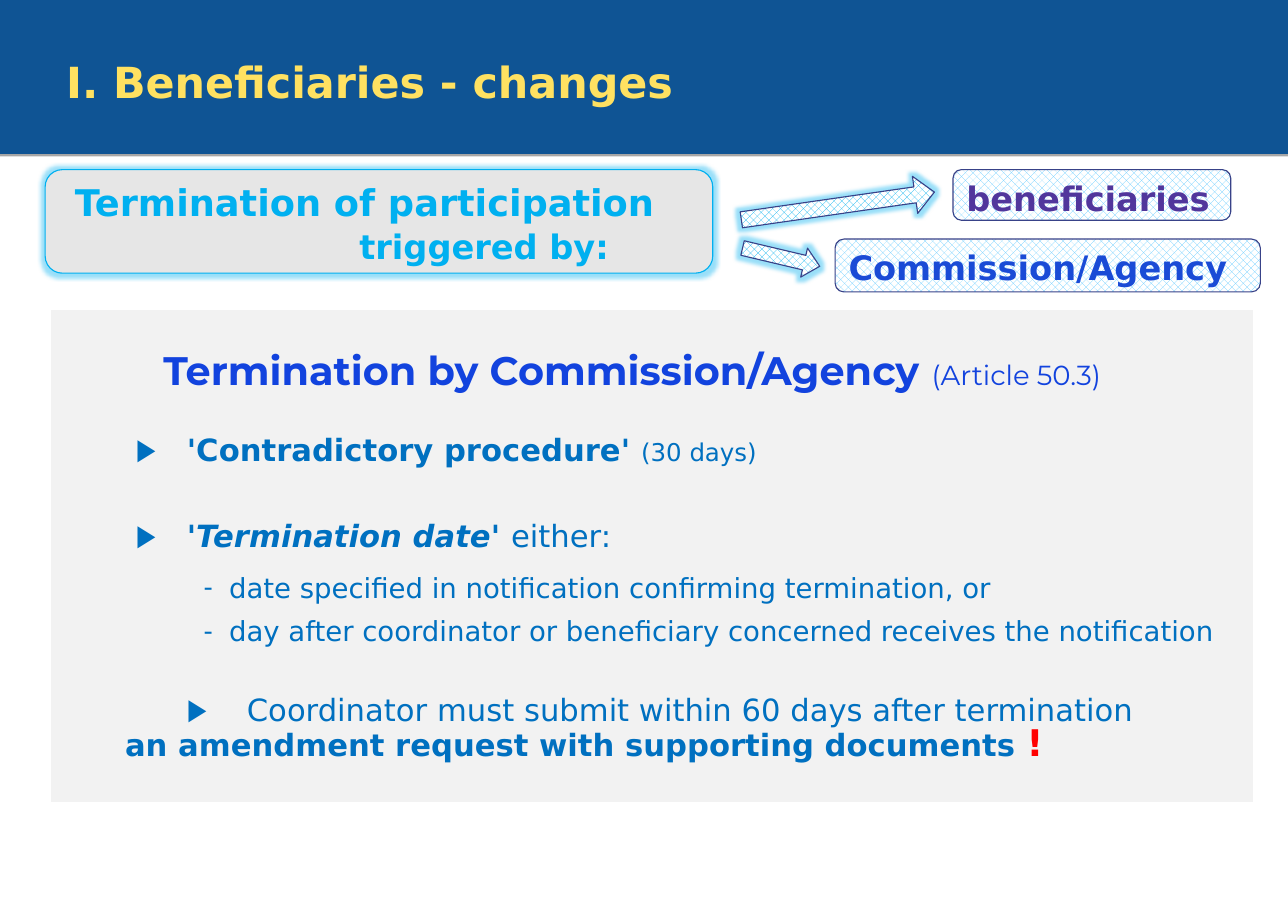
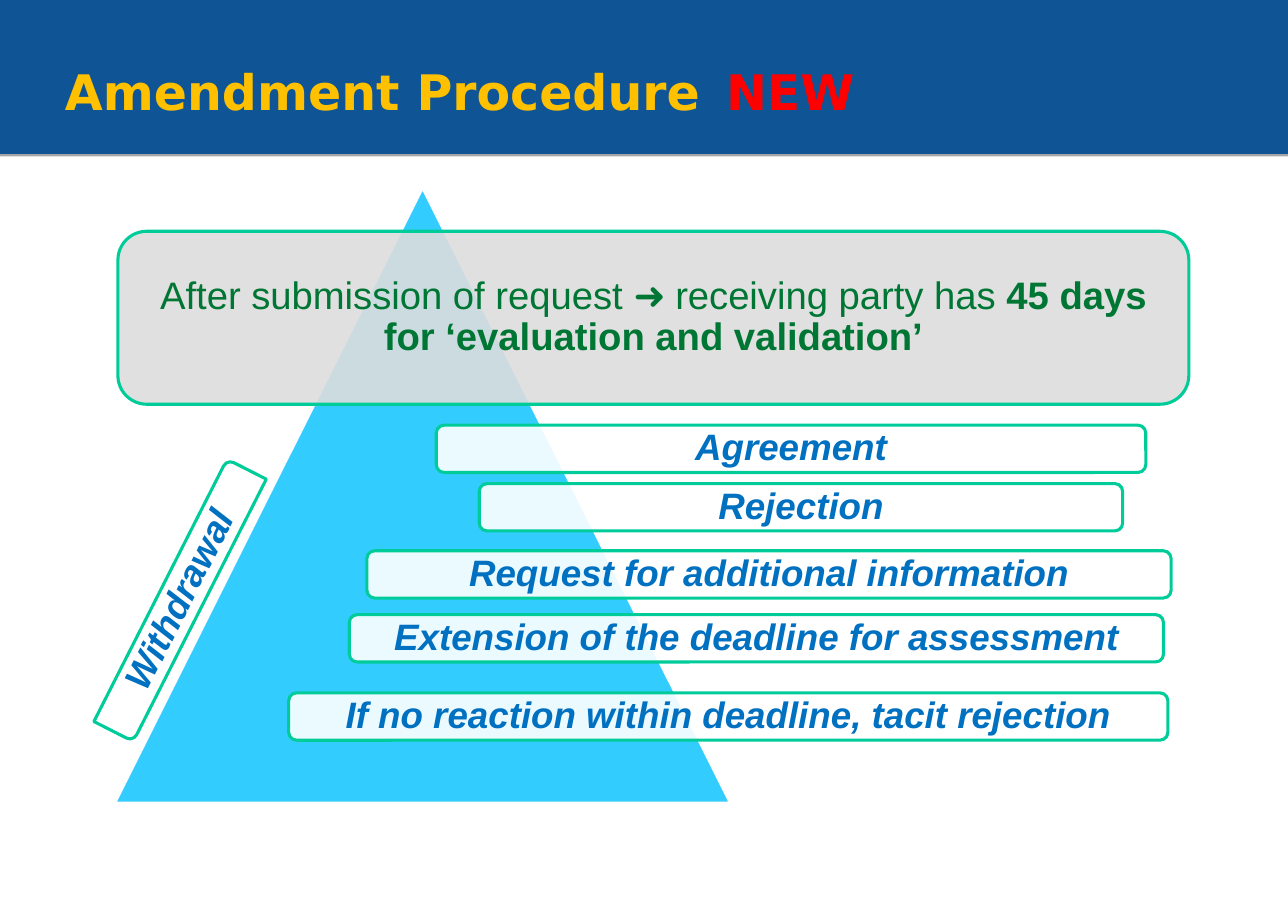
"""Build two slides on beneficiary changes and the amendment procedure."""
from lxml.etree import SubElement
from pptx import Presentation
from pptx.dml.color import RGBColor
from pptx.enum.dml import MSO_PATTERN_TYPE as PATTERN
from pptx.enum.shapes import MSO_SHAPE as SHAPE
from pptx.enum.text import MSO_ANCHOR as ANCHOR, MSO_AUTO_SIZE as AUTO, PP_ALIGN as ALIGN
from pptx.oxml.ns import qn
from pptx.util import Pt

WIDTH, HEIGHT = 841.68, 595.44
SANS, ARIAL, SYMBOL, HEADING = "DejaVu Sans", "Arial", "Lato", "Montserrat"
COLORS = {
    "band": "0F5494", "white": "FFFFFF", "black": "000000", "panel": "F2F2F2",
    "title": "FFE161", "gold": "FFC000", "red": "FF0000", "blue": "0070C0",
    "heading": "1243DE", "cyan": "00B0F0", "box": "E6E6E6", "hatch": "66CCFF",
    "outline": "384288", "agency": "1A4BD6", "purple": "51369C",
    "triangle": "33CCFF", "card": "DDDDDD", "green": "00CC99", "leaf": "007635",
}
BODY = {"size": 20, "name": SANS, "color": "blue"}
DETAIL = {**BODY, "size": 18}
STEP = {"size": 24, "name": ARIAL, "color": "blue", "bold": True, "italic": True}
CARD = {"size": 25, "name": ARIAL, "color": "leaf"}
LABEL = {"size": 22, "name": SANS, "bold": True}
INSETS = {"margin_left": Pt(7.92), "margin_right": Pt(7.92),
          "margin_top": Pt(4.32), "margin_bottom": Pt(4.32)}


def rgb(name):
    """Return the named colour."""
    return RGBColor.from_string(COLORS[name])


def apply(obj, values):
    """Set every attribute in values on obj."""
    for key, value in values.items():
        setattr(obj, key, value)


def place(shape, left, top, width, height):
    """Position a shape in points."""
    apply(shape, {"left": Pt(left), "top": Pt(top), "width": Pt(width), "height": Pt(height)})


def add_effect(shape, kind, color, alpha, **attrs):
    """Add a glow or shadow to a shape."""
    effects = shape.element.spPr.find(qn("a:effectLst"))
    effect = SubElement(effects, qn(f"a:{kind}"), attrs)
    clr = SubElement(effect, qn("a:srgbClr"), val=COLORS[color])
    SubElement(clr, qn("a:alpha"), val=str(alpha * 1000))


def add_glow(shape):
    """Surround a shape with a soft cyan glow."""
    add_effect(shape, "glow", "cyan", 40, rad=str(Pt(5)))


def add_box(s, kind, at, fill, line, weight=0.75, alpha=100, hatched=False, rotation=0, adjust=()):
    """Add a filled and outlined preset shape."""
    shape = s.shapes.add_shape(kind, *map(Pt, at))
    shape.shadow.inherit = False
    if hatched:
        shape.fill.patterned()
        apply(shape.fill, {"pattern": PATTERN.PERCENT_50})
        shape.fill.fore_color.rgb = rgb(fill)
        shape.fill.back_color.rgb = rgb("white")
    else:
        shape.fill.solid()
        shape.fill.fore_color.rgb = rgb(fill)
    if alpha < 100:
        clr = shape.element.spPr.find(qn("a:solidFill")).find(qn("a:srgbClr"))
        SubElement(clr, qn("a:alpha"), val=str(alpha * 1000))
    shape.line.color.rgb = rgb(line)
    apply(shape, {"rotation": rotation})
    shape.line.width = Pt(weight)
    for i, value in enumerate(adjust):
        shape.adjustments[i] = value
    return shape


def para(*runs, align=ALIGN.LEFT, before=0, spacing=1.0, left=0, indent=0, bullet=None, tab=None):
    """Describe one paragraph made of (text, style) runs."""
    return {"runs": runs, "left": left, "indent": indent, "bullet": bullet, "tab": tab,
            "format": {"alignment": align, "space_before": Pt(before),
                       "space_after": Pt(0), "line_spacing": spacing}}


def write(shape, paras, **frame):
    """Write paragraphs into the text frame of a shape."""
    tf = shape.text_frame
    apply(tf, {"word_wrap": True, "auto_size": AUTO.NONE, "vertical_anchor": ANCHOR.TOP, **frame})
    for i, item in enumerate(paras):
        p = tf.add_paragraph() if i else tf.paragraphs[0]
        apply(p, item["format"])
        pPr = p._p.get_or_add_pPr()
        pPr.set("marL", str(Pt(item["left"])))
        pPr.set("indent", str(Pt(item["indent"])))
        if item["bullet"]:
            SubElement(pPr, qn("a:buFont"), typeface=SYMBOL)
            SubElement(pPr, qn("a:buChar"), char=item["bullet"])
        else:
            SubElement(pPr, qn("a:buNone"))
        if item["tab"]:
            tabs = SubElement(pPr, qn("a:tabLst"))
            SubElement(tabs, qn("a:tab"), pos=str(Pt(item["tab"])), algn="l")
        for text, style in item["runs"]:
            r = p.add_run()
            r.text = text
            values = {"bold": False, "italic": False, **style}
            r.font.color.rgb = rgb(values.pop("color"))
            apply(r.font, {**values, "size": Pt(values["size"])})


def add_title(s, at, *runs, tab=None):
    """Place and format the title placeholder."""
    title = s.shapes.title
    place(title, *at)
    write(title, [para(*runs, tab=tab)], **INSETS)


def add_band(s):
    """Put the shared title band on the layout of a slide."""
    band = add_box(s, SHAPE.RECTANGLE, (0, 0, WIDTH, 97.92), "band", "band", 5)
    add_effect(band, "outerShdw", "black", 35, dist=str(Pt(1.8)), dir="5400000")
    s.slide_layout.shapes.element.insert(2, band.element)


def add_trigger(s):
    """Add the trigger box, its arrows and the two parties."""
    parties = [("Commission/Agency", "agency", (545.76, 156.24, 277.92, 34.56)),
               ("beneficiaries", "purple", (622.8, 110.88, 181.44, 33.12))]
    for text, color, at in parties:
        box = add_box(s, SHAPE.ROUNDED_RECTANGLE, at, "hatch", "outline", hatched=True)
        write(box, [para((text, {**LABEL, "color": color}))])
    arrows = [((483.84, 122.4, 127.44, 24.48), -8.2, (0.43, 0.52)),
              ((484.56, 158.4, 51.84, 19.44), 13.3, (0.5, 0.54))]
    for at, rotation, adjust in arrows:
        add_glow(add_box(s, SHAPE.RIGHT_ARROW, at, "cyan", "outline", hatched=True,
                         rotation=rotation, adjust=adjust))
    box = add_box(s, SHAPE.ROUNDED_RECTANGLE, (29.52, 110.88, 436.32, 67.68), "box", "cyan")
    add_glow(box)
    style = {**LABEL, "color": "cyan"}
    write(box, [para(("Termination of participation", {**style, "size": 24}), left=9),
                para(("triggered by:", style), left=195, before=1)])


def add_termination(s):
    """Add the panel on termination by the Commission."""
    panel = add_box(s, SHAPE.RECTANGLE, (33.84, 203.04, 784.8, 321.12), "panel", "panel")
    head = {"size": 26, "name": HEADING, "color": "heading", "bold": True}
    strong = {**BODY, "bold": True}
    point = {"left": 80.4, "indent": -33.3, "bullet": "▶", "spacing": 0.8}
    detail = {"left": 108, "indent": -17, "bullet": "-", "spacing": 0.8}
    write(panel, [
        para(("Termination by Commission/Agency ", head),
             ("(Article 50.3)", {**head, "size": 18, "bold": False}), left=65, spacing=0.8),
        para(("'Contradictory procedure' ", strong),
             ("(30 days)", {**BODY, "size": 16}), before=29, **point),
        para(("'", strong), ("Termination date", {**strong, "italic": True}),
             ("' ", strong), ("either:", BODY), before=37, **point),
        para(("date specified in notification confirming termination, or", DETAIL),
             before=16, **detail),
        para(("day after coordinator or beneficiary concerned receives the notification", DETAIL),
             before=11, **detail),
        para(("Coordinator must submit within 60 days after termination", BODY),
             before=33, **{**point, "left": 119.6, "indent": -39.2}),
        para(("an amendment request with supporting documents ", strong),
             ("!", {**strong, "size": 24, "color": "red"}), left=40, before=1, spacing=0.8),
    ], **{**INSETS, "margin_top": Pt(29)})


def add_outlined(s, kind, at, *runs, fill="white", **options):
    """Add a translucent green-edged box with centred text."""
    box = add_box(s, kind, at, fill, "green", 2, alpha=90, **options)
    write(box, [para(*runs, align=ALIGN.CENTER, spacing=0.9)],
          vertical_anchor=ANCHOR.MIDDLE, margin_top=0, margin_bottom=0)


def add_procedure(s):
    """Add the triangle with the steps of the procedure."""
    add_box(s, SHAPE.ISOSCELES_TRIANGLE, (74.88, 122.4, 402.48, 402.48), "triangle", "white", 2)
    add_outlined(s, SHAPE.ROUNDED_RECTANGLE, (77.04, 151.2, 699.84, 113.04),
                 ("After submission of request ", CARD), ("➜ ", {**CARD, "name": SYMBOL}),
                 ("receiving party has ", CARD),
                 ("45 days for ‘evaluation and validation’", {**CARD, "bold": True}), fill="card")
    add_outlined(s, SHAPE.ROUND_2_DIAG_RECTANGLE, (21.6, 378, 192.24, 28.8),
                 ("Withdrawal", STEP), rotation=296.9, adjust=(0, 0.17))
    steps = [("Agreement", 285.12, 277.92, 463.68),
             ("Rejection", 313.2, 316.08, 420.48),
             ("Request for additional information", 239.76, 360, 525.6),
             ("Extension of the deadline for assessment", 228.24, 401.76, 532.08),
             ("If no reaction within deadline, tacit rejection", 188.64, 452.88, 574.56)]
    for text, left, top, width in steps:
        add_outlined(s, SHAPE.ROUNDED_RECTANGLE, (left, top, width, 30.96), (text, STEP))


def main():
    """Build and save the presentation."""
    prs = Presentation()
    apply(prs, {"slide_width": Pt(WIDTH), "slide_height": Pt(HEIGHT)})
    changes, procedure = [prs.slides.add_slide(prs.slide_layouts[5]) for _ in range(2)]
    add_band(changes)
    title = {"size": 28, "name": SANS, "color": "title", "bold": True}
    add_title(changes, (35.28, 32, 800, 60), ("I. Beneficiaries - changes", title))
    add_trigger(changes)
    add_termination(changes)
    title = {**title, "size": 32, "color": "gold"}
    add_title(procedure, (34.56, 36, 761, 60), ("Amendment Procedure\t", title),
              ("NEW", {**title, "color": "red"}), tab=599)
    add_procedure(procedure)
    prs.save("out.pptx")


if __name__ == "__main__":
    main()
